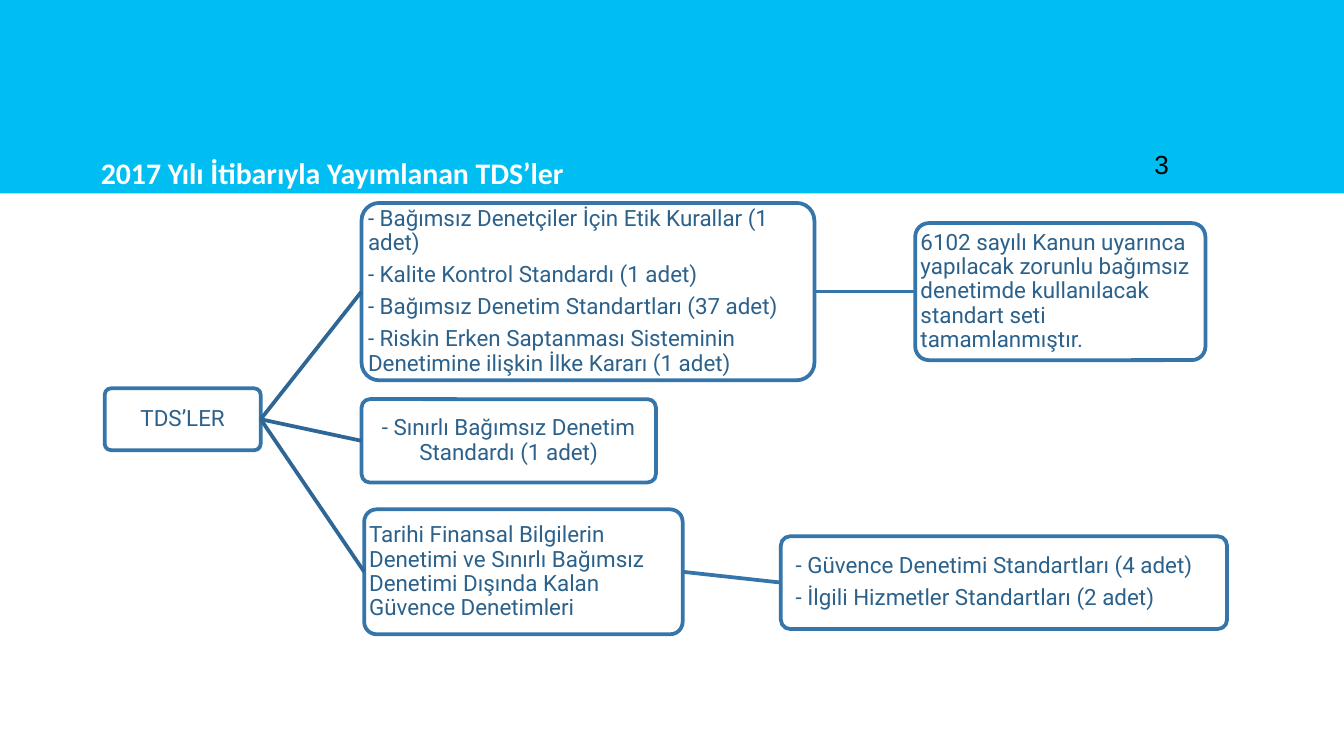
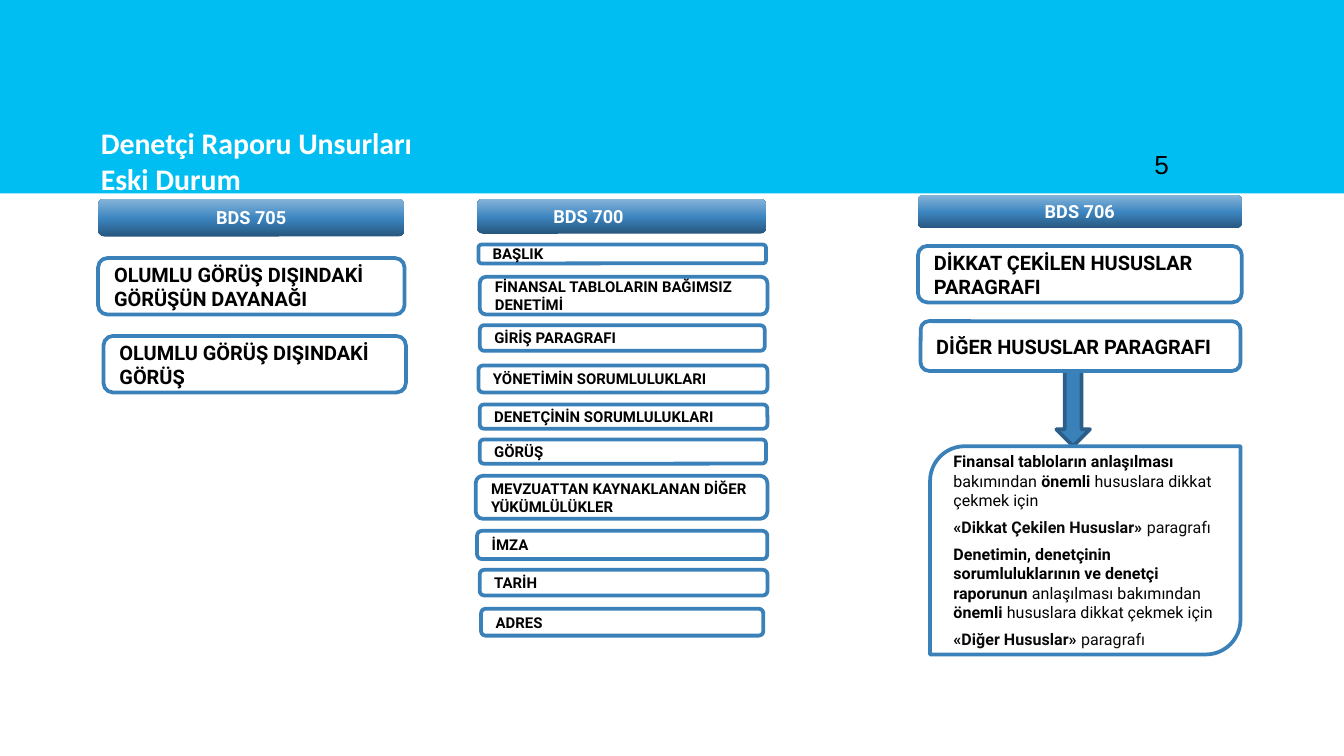
"""Build two slides on audit standards: a tree of standards and the parts of the auditor's report."""
from copy import deepcopy
from dataclasses import dataclass
from typing import NamedTuple

from lxml.etree import SubElement
from pptx import Presentation
from pptx.dml.color import RGBColor
from pptx.enum.shapes import MSO_CONNECTOR, MSO_SHAPE
from pptx.enum.text import MSO_ANCHOR, MSO_AUTO_SIZE, PP_ALIGN
from pptx.oxml.ns import qn
from pptx.util import Inches, Pt

BAND, WHITE, BLACK, NEAR_BLACK = "00BEF2", "FFFFFF", "000000", "0A0A0A"
TREE_LINE, TREE_TEXT, ROOT_LINK = "3575A9", "2B618B", "2E6795"
BOX_LINE, ARROW_LINE = "3A81BA", "2B5F8A"
HEADER_STOPS = [(0, "27567D"), (0.48, "3C85C0"), (1, "85B4D9")]
LINE_WIDTH = 2


class Area(NamedTuple):
    left: float
    top: float
    width: float
    height: float


class Span(NamedTuple):
    text: str
    bold: bool = False
    colour: str = BLACK


@dataclass
class TextStyle:
    size: float
    colour: str = BLACK
    bold: bool = False
    font: str = "Roboto"
    align: PP_ALIGN = PP_ALIGN.LEFT
    line_spacing: float | None = None
    before: float = 0
    after: float = 0


@dataclass
class Node:
    name: str
    area: Area
    lines: list[str]
    parent: str = ""
    centred: bool = False
    indent: float = 0


@dataclass
class Column:
    header: str
    area: Area
    size: float
    boxes: list[tuple[str, Area]]
    header_right_margin: float = 0.1


def colour(value: str) -> RGBColor:
    return RGBColor.from_string(value)


def lengths(area: Area) -> list:
    return [Inches(value) for value in area]


def write(frame, lines: list, style: TextStyle) -> None:
    """Fill a frame with paragraphs, each a string or a list of spans."""
    for index, line in enumerate(lines):
        para = frame.paragraphs[0] if index == 0 else frame.add_paragraph()
        para.alignment = style.align
        para.line_spacing = style.line_spacing
        para.space_before = Pt(style.before if index else 0)
        para.space_after = Pt(style.after)
        spans = [Span(line, style.bold, style.colour)] if isinstance(line, str) else line
        for span in spans:
            run = para.add_run()
            run.text = span.text
            run.font.name = style.font
            run.font.size = Pt(style.size)
            run.font.bold = span.bold
            run.font.color.rgb = colour(span.colour)


def set_margins(frame, horizontal: float, vertical: float) -> None:
    frame.margin_left = frame.margin_right = Inches(horizontal)
    frame.margin_top = frame.margin_bottom = Inches(vertical)


def add_box(page, kind: MSO_SHAPE, area: Area, fill: str = WHITE, line: str = ""):
    box = page.shapes.add_shape(kind, *lengths(area))
    box.shadow.inherit = False
    box.fill.solid()
    box.fill.fore_color.rgb = colour(fill)
    if line:
        box.line.color.rgb = colour(line)
        box.line.width = Pt(LINE_WIDTH)
    else:
        box.line.fill.background()
    box.text_frame.word_wrap = True
    box.text_frame.vertical_anchor = MSO_ANCHOR.MIDDLE
    return box


def add_header(page, column: Column) -> None:
    box = add_box(page, MSO_SHAPE.ROUNDED_RECTANGLE, column.area)
    box.fill.gradient()
    box.fill.gradient_angle = 90
    stop_list = box.element.spPr.find(qn("a:gradFill")).find(qn("a:gsLst"))
    stop_list.append(deepcopy(stop_list[0]))
    for stop, (position, value) in zip(box.fill.gradient_stops, HEADER_STOPS):
        stop.position = position
        stop.color.rgb = colour(value)
    box.text_frame.margin_right = Inches(column.header_right_margin)
    write(box.text_frame, [column.header], TextStyle(9.7, WHITE, True, align=PP_ALIGN.CENTER))


def add_link(page, parent, child, line: str) -> None:
    """Join the right side of the parent to the left side of the child."""
    link = page.shapes.add_connector(MSO_CONNECTOR.STRAIGHT, 0, 0, 0, 0)
    link.begin_connect(parent, 3)
    link.end_connect(child, 1)
    link.line.color.rgb = colour(line)
    link.line.width = Pt(LINE_WIDTH)
    SubElement(link.element.spPr, qn("a:effectLst"))


def add_page(deck, title_area: Area, title_lines: list[str], number: str):
    page = deck.slides.add_slide(deck.slide_layouts[5])
    title = page.shapes.title
    title.left, title.top, title.width, title.height = lengths(title_area)
    frame = title.text_frame
    frame.auto_size = MSO_AUTO_SIZE.NONE
    frame.word_wrap = False
    frame.vertical_anchor = MSO_ANCHOR.TOP
    set_margins(frame, 0.1, 0.05)
    write(frame, title_lines, TextStyle(16, WHITE, True, "Calibri"))

    number_frame = page.shapes.add_textbox(*lengths(Area(8.49, 0.71, 0.6, 0.73))).text_frame
    number_frame.word_wrap = True
    number_frame.vertical_anchor = MSO_ANCHOR.BOTTOM
    set_margins(number_frame, 0.1, 0.1)
    write(number_frame, [number], TextStyle(14, font="Arial"))
    return page


def add_band(page) -> None:
    """Place the top band on the layout that all pages share."""
    band = add_box(page, MSO_SHAPE.RECTANGLE, Area(0, 0, 10, 1.44), BAND)
    page.slide_layout.shapes.element.insert(2, band.element)


NODES = [
    Node("root", Area(0.78, 2.89, 1.16, 0.46), ["TDS’LER"], centred=True),
    Node("audit", Area(2.69, 1.51, 3.37, 1.32), [
        "- Bağımsız Denetçiler İçin Etik Kurallar (1 adet)",
        "- Kalite Kontrol Standardı (1 adet)",
        "- Bağımsız Denetim Standartları (37 adet)",
        "- Riskin Erken Saptanması Sisteminin Denetimine ilişkin İlke Kararı (1 adet)",
    ], "root"),
    Node("law", Area(6.81, 1.66, 2.16, 1.02), [
        "6102 sayılı Kanun uyarınca yapılacak zorunlu bağımsız denetimde "
        "kullanılacak standart seti tamamlanmıştır.",
    ], "audit"),
    Node("review", Area(2.69, 2.97, 2.19, 0.62),
         ["- Sınırlı Bağımsız Denetim Standardı (1 adet)"], "root", True),
    Node("assurance", Area(2.71, 3.79, 2.37, 0.93), [
        "Tarihi Finansal Bilgilerin Denetimi ve Sınırlı Bağımsız Denetimi "
        "Dışında Kalan Güvence Denetimleri",
    ], "root"),
    Node("services", Area(5.81, 3.99, 3.32, 0.69), [
        "- Güvence Denetimi Standartları (4 adet)",
        "- İlgili Hizmetler Standartları (2 adet)",
    ], "assurance", indent=0.08),
]

COLUMNS = [
    Column("BDS 705", Area(0.73, 1.48, 2.28, 0.28), 10.7, [
        ("OLUMLU GÖRÜŞ DIŞINDAKİ GÖRÜŞÜN DAYANAĞI", Area(0.73, 1.92, 2.28, 0.42)),
        ("OLUMLU GÖRÜŞ DIŞINDAKİ GÖRÜŞ", Area(0.77, 2.5, 2.25, 0.42)),
    ]),
    Column("BDS 700", Area(3.55, 1.48, 2.15, 0.26), 8, [
        ("BAŞLIK", Area(3.56, 1.82, 2.14, 0.14)),
        ("FİNANSAL TABLOLARIN BAĞIMSIZ DENETİMİ", Area(3.57, 2.06, 2.14, 0.28)),
        ("GİRİŞ PARAGRAFI", Area(3.57, 2.42, 2.12, 0.19)),
        ("YÖNETİMİN SORUMLULUKLARI", Area(3.56, 2.72, 2.15, 0.2)),
        ("DENETÇİNİN SORUMLULUKLARI", Area(3.57, 3.01, 2.14, 0.18)),
        ("GÖRÜŞ", Area(3.57, 3.27, 2.13, 0.18)),
        ("MEVZUATTAN KAYNAKLANAN DİĞER YÜKÜMLÜLÜKLER", Area(3.54, 3.54, 2.17, 0.32)),
        ("İMZA", Area(3.55, 3.95, 2.16, 0.21)),
        ("TARİH", Area(3.57, 4.24, 2.14, 0.19)),
        ("ADRES", Area(3.58, 4.53, 2.1, 0.2)),
    ], 0.59),
    Column("BDS 706", Area(6.83, 1.45, 2.41, 0.25), 10.7, [
        ("DİKKAT ÇEKİLEN HUSUSLAR PARAGRAFI", Area(6.83, 1.83, 2.41, 0.42)),
        ("DİĞER HUSUSLAR PARAGRAFI", Area(6.85, 2.39, 2.38, 0.37)),
    ]),
]

EXPLANATION = [
    [Span("Finansal tabloların anlaşılması ", True), Span("bakımından "),
     Span("önemli ", True), Span("hususlara dikkat çekmek için")],
    [Span("«Dikkat Çekilen Hususlar» ", True, NEAR_BLACK), Span("paragrafı", False, NEAR_BLACK)],
    [Span("Denetimin, denetçinin sorumluluklarının ve denetçi raporunun", True),
     Span(" anlaşılması bakımından "), Span("önemli", True),
     Span(" hususlara dikkat çekmek için")],
    [Span("«Diğer Hususlar» ", True, NEAR_BLACK), Span("paragrafı", False, NEAR_BLACK)],
]


def draw_tree(page) -> None:
    drawn = {}
    for node in NODES:
        box = add_box(page, MSO_SHAPE.ROUNDED_RECTANGLE, node.area, line=TREE_LINE)
        box.adjustments[0] = 0.1
        set_margins(box.text_frame, 0.01, 0.01)
        box.text_frame.margin_left = Inches(0.01 + node.indent)
        align = PP_ALIGN.CENTER if node.centred else PP_ALIGN.LEFT
        write(box.text_frame, node.lines,
              TextStyle(12, TREE_TEXT, align=align, line_spacing=0.9, after=4.2))
        drawn[node.name] = box
        if node.parent:
            line = ROOT_LINK if node.parent == "root" else TREE_LINE
            add_link(page, drawn[node.parent], box, line)


def draw_report_parts(page) -> None:
    add_box(page, MSO_SHAPE.DOWN_ARROW, Area(7.86, 2.66, 0.25, 0.66), BOX_LINE, ARROW_LINE)
    for column in COLUMNS:
        add_header(page, column)
        for text, area in column.boxes:
            box = add_box(page, MSO_SHAPE.ROUNDED_RECTANGLE, area, line=BOX_LINE)
            write(box.text_frame, [text], TextStyle(column.size, bold=True))
    note = add_box(page, MSO_SHAPE.ROUND_2_DIAG_RECTANGLE, Area(6.92, 3.32, 2.31, 1.55),
                   line=BOX_LINE)
    write(note.text_frame, EXPLANATION, TextStyle(8.6, before=2.1, after=2.1))


def main() -> None:
    deck = Presentation()
    deck.slide_width = Inches(10)
    deck.slide_height = Inches(10 * 9 / 16)
    tree_page = add_page(deck, Area(0.65, 1.1, 3.72, 0.37),
                         ["2017 Yılı İtibarıyla Yayımlanan TDS’ler"], "3")
    add_band(tree_page)
    draw_tree(tree_page)
    report_page = add_page(deck, Area(0.65, 0.88, 2.56, 0.64),
                           ["Denetçi Raporu Unsurları", "Eski Durum"], "5")
    draw_report_parts(report_page)
    deck.save("out.pptx")


if __name__ == "__main__":
    main()
